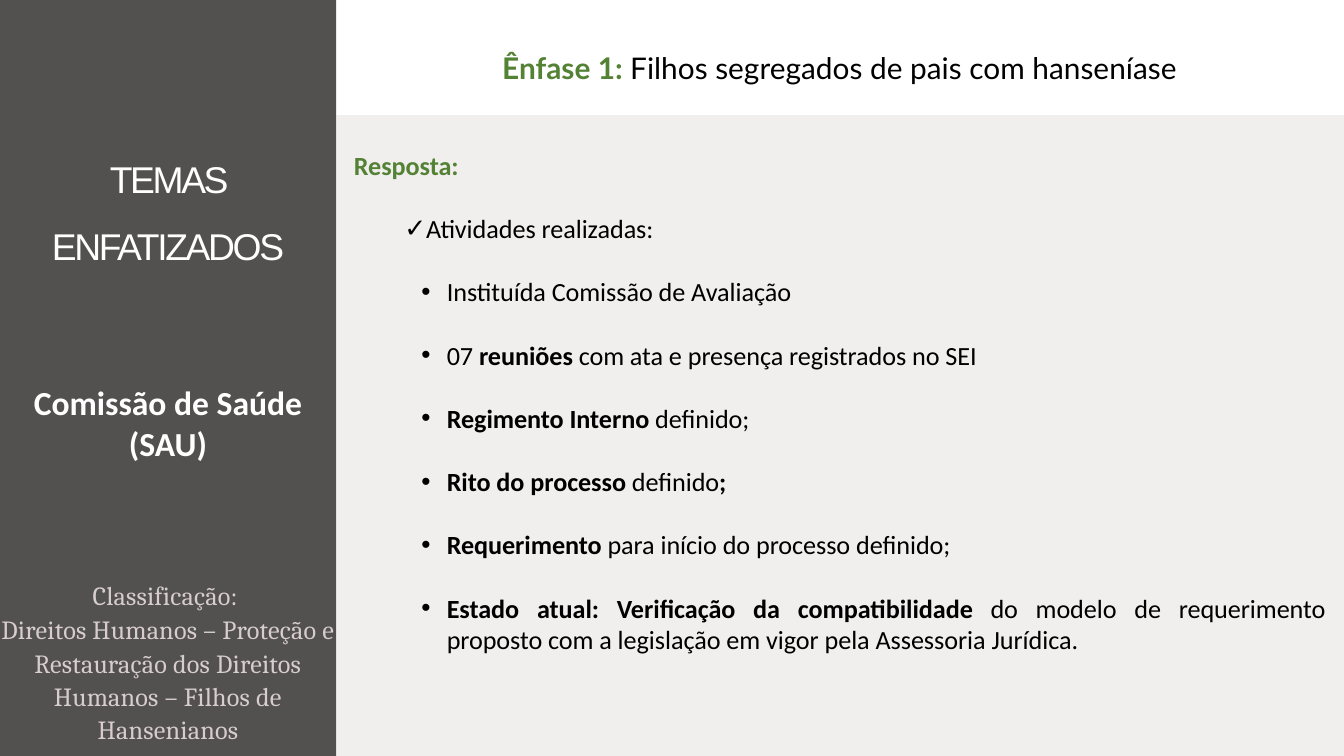
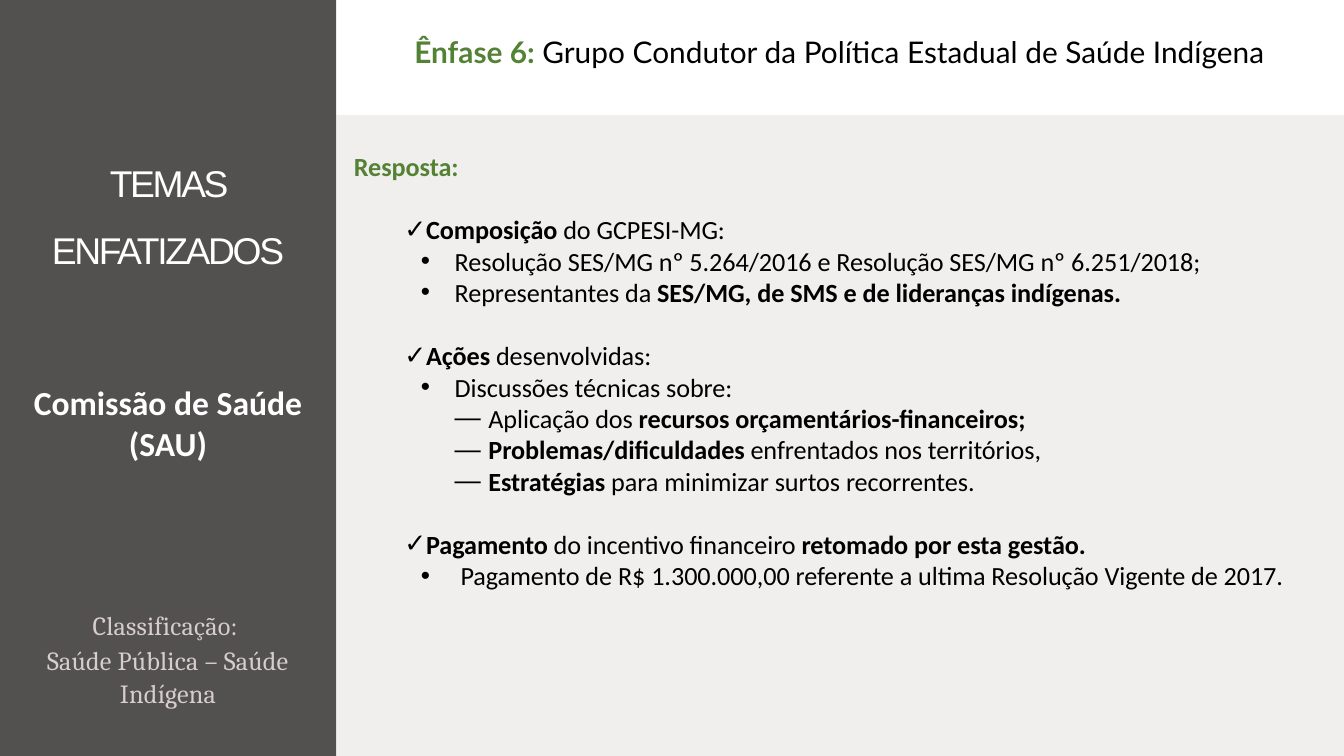
from dataclasses import dataclass

from lxml import etree
from pptx import Presentation
from pptx.dml.color import RGBColor
from pptx.enum.shapes import MSO_SHAPE
from pptx.enum.text import MSO_ANCHOR, PP_ALIGN
from pptx.oxml.ns import qn
from pptx.util import Cm, Pt

RECTANGLE = MSO_SHAPE.RECTANGLE
TOP, MIDDLE = MSO_ANCHOR.TOP, MSO_ANCHOR.MIDDLE
CENTER, JUSTIFY = PP_ALIGN.CENTER, PP_ALIGN.JUSTIFY

CHARCOAL = RGBColor(0x53, 0x50, 0x50)
SAND = RGBColor(0xD6, 0xCD, 0xCC)
GREEN = RGBColor(0x54, 0x82, 0x35)
WHITE = RGBColor(0xFF, 0xFF, 0xFF)
BLACK = RGBColor(0x00, 0x00, 0x00)

PAGE_WIDTH, PAGE_HEIGHT = 33.87, 19.05
SIDEBAR_WIDTH = 8.47
CONTENT_WIDTH = PAGE_WIDTH - SIDEBAR_WIDTH
BAND_TOP = 2.9
BODY_SIZE = 18.67
HEADLINE_SIZE = 21.33
BODY_GAP = 22.8


@dataclass(frozen=True)
class Level:
    depth: int
    margin: float
    indent: float
    bullet: str


CHECK = Level(1, 1.27, 0, "✓")
DOT = Level(2, 2.34, -0.64, "•")
WIDE_DOT = Level(2, 2.54, -0.85, "•")
DASH = Level(3, 3.39, -0.85, "―")


@dataclass(frozen=True)
class Item:
    level: Level
    text: str
    gap: bool = False


@dataclass(frozen=True)
class Topic:
    label: str
    headline: str
    headline_inset: float
    title_top: float
    category: str
    category_top: float
    body_inset: float
    items: tuple[Item, ...]


TOPICS = (
    Topic(
        "Ênfase 1: ", "Filhos segregados de pais com hanseníase", 1.46, 3.3,
        "Direitos Humanos – Proteção e Restauração dos Direitos Humanos – Filhos de Hansenianos",
        14.53, 0.86,
        (
            Item(CHECK, "Atividades realizadas:", True),
            Item(DOT, "Instituída Comissão de Avaliação", True),
            Item(DOT, "07 *reuniões* com ata e presença registrados no SEI", True),
            Item(DOT, "*Regimento Interno *definido;", True),
            Item(DOT, "*Rito do processo *definido*;*", True),
            Item(DOT, "*Requerimento* para início do processo definido;", True),
            Item(DOT, "*Estado atual: Verificação da compatibilidade *do modelo de requerimento "
                      "proposto com a legislação em vigor pela Assessoria Jurídica.", True),
        ),
    ),
    Topic(
        "Ênfase 6: ", "Grupo Condutor da Política Estadual de Saúde Indígena", 0.77, 3.4,
        "Saúde Pública – Saúde Indígena", 15.29, 0.89,
        (
            Item(CHECK, "*Composição* do GCPESI-MG:", True),
            Item(WIDE_DOT, "Resolução SES/MG nº 5.264/2016 e Resolução SES/MG nº 6.251/2018;"),
            Item(WIDE_DOT, "Representantes da *SES/MG, de SMS e de lideranças indígenas.*"),
            Item(CHECK, "*Ações* desenvolvidas:", True),
            Item(WIDE_DOT, "Discussões técnicas sobre:"),
            Item(DASH, "Aplicação dos *recursos orçamentários-financeiros;*"),
            Item(DASH, "*Problemas/dificuldades* enfrentados nos territórios,"),
            Item(DASH, "*Estratégias* para minimizar surtos recorrentes."),
            Item(CHECK, "*Pagamento* do incentivo financeiro *retomado por esta gestão.*", True),
            Item(WIDE_DOT, " Pagamento de R$ 1.300.000,00 referente a ultima Resolução Vigente de 2017."),
        ),
    ),
)


def add_panel(page, left: float, top: float, width: float, height: float,
              color: RGBColor, opacity: int = 100) -> None:
    panel = page.shapes.add_shape(RECTANGLE, Cm(left), Cm(top), Cm(width), Cm(height))
    panel.shadow.inherit = False
    panel.line.fill.background()
    panel.fill.solid()
    panel.fill.fore_color.rgb = color
    if opacity < 100:
        tint = panel.element.spPr.find(qn("a:solidFill"))[0]
        etree.SubElement(tint, qn("a:alpha")).set("val", str(opacity * 1000))


def add_frame(page, left: float, top: float, width: float, height: float, *,
              side: float = 0.0, inset: float = 0.03, anchor=TOP):
    box = page.shapes.add_textbox(Cm(left), Cm(top), Cm(width), Cm(height))
    frame = box.text_frame
    frame.word_wrap = True
    frame.vertical_anchor = anchor
    frame.margin_left = frame.margin_right = Cm(side)
    frame.margin_top = Cm(inset)
    frame.margin_bottom = Cm(0)
    return frame


def add_para(frame, *, align=CENTER, before: float = 0, spacing: float = 1.0):
    first = frame.paragraphs[0]
    para = frame.add_paragraph() if first.runs else first
    para.alignment = align
    para.space_before = Pt(before)
    para.line_spacing = spacing
    return para


def add_text(para, text: str, *, size: float, font: str, color: RGBColor,
             bold: bool = False, tracking: float = 0) -> None:
    for index, part in enumerate(text.split("*")):
        if not part:
            continue
        span = para.add_run()
        span.text = part
        span.font.size = Pt(size)
        span.font.name = font
        span.font.color.rgb = color
        span.font.bold = bold or index % 2 == 1
        if tracking:
            span._r.get_or_add_rPr().set("spc", str(round(tracking * 100)))


def set_level(para, level: Level) -> None:
    para.level = level.depth
    properties = para._p.get_or_add_pPr()
    properties.set("marL", str(Cm(level.margin)))
    properties.set("indent", str(Cm(level.indent)))
    etree.SubElement(properties, qn("a:buFont")).set("typeface", "Arial")
    etree.SubElement(properties, qn("a:buChar")).set("char", level.bullet)


def draw_sidebar(page, topic: Topic) -> None:
    title = add_frame(page, 0, topic.title_top, SIDEBAR_WIDTH, 3.48, anchor=MIDDLE)
    add_text(add_para(title, before=0.7, spacing=1.5), "TEMAS ENFATIZADOS",
             size=26.67, font="Arial", color=WHITE, tracking=-1.7)
    category = add_frame(page, 0, topic.category_top, SIDEBAR_WIDTH,
                         PAGE_HEIGHT - topic.category_top)
    for line in ("Classificação: ", topic.category):
        add_text(add_para(category, before=0.7, spacing=1.06), line,
                 size=BODY_SIZE, font="Cambria", color=SAND, tracking=0.2)
    committee = add_frame(page, 0, 9.55, SIDEBAR_WIDTH, 2.24, side=0.18, inset=0.08)
    add_text(add_para(committee), "Comissão de Saúde (SAU)",
             size=24, font="Calibri", color=WHITE, bold=True)


def draw_answer(page, topic: Topic) -> None:
    answer = add_frame(page, 8.74, BAND_TOP, 24.84, 13.94, side=0.18, inset=topic.body_inset)
    add_text(add_para(answer, align=JUSTIFY), "Resposta:",
             size=BODY_SIZE, font="Calibri", color=GREEN, bold=True)
    for item in topic.items:
        para = add_para(answer, align=JUSTIFY, before=BODY_GAP if item.gap else 0)
        set_level(para, item.level)
        add_text(para, item.text, size=BODY_SIZE, font="Calibri", color=BLACK)


def draw_headline(page, topic: Topic) -> None:
    headline = add_frame(page, SIDEBAR_WIDTH, 0.08, CONTENT_WIDTH, 2.7,
                         side=0.18, inset=topic.headline_inset)
    para = add_para(headline)
    add_text(para, topic.label, size=HEADLINE_SIZE, font="Lato", color=GREEN, bold=True)
    add_text(para, topic.headline, size=HEADLINE_SIZE, font="Lato", color=BLACK)


def main() -> None:
    deck = Presentation()
    deck.slide_width, deck.slide_height = Cm(PAGE_WIDTH), Cm(PAGE_HEIGHT)
    for topic in TOPICS:
        page = deck.slides.add_slide(deck.slide_layouts[6])
        add_panel(page, 0, 0, SIDEBAR_WIDTH, PAGE_HEIGHT, CHARCOAL)
        add_panel(page, SIDEBAR_WIDTH, BAND_TOP, CONTENT_WIDTH,
                  PAGE_HEIGHT - BAND_TOP, SAND, opacity=32)
        draw_sidebar(page, topic)
        draw_answer(page, topic)
        draw_headline(page, topic)
    deck.save("out.pptx")


if __name__ == "__main__":
    main()
